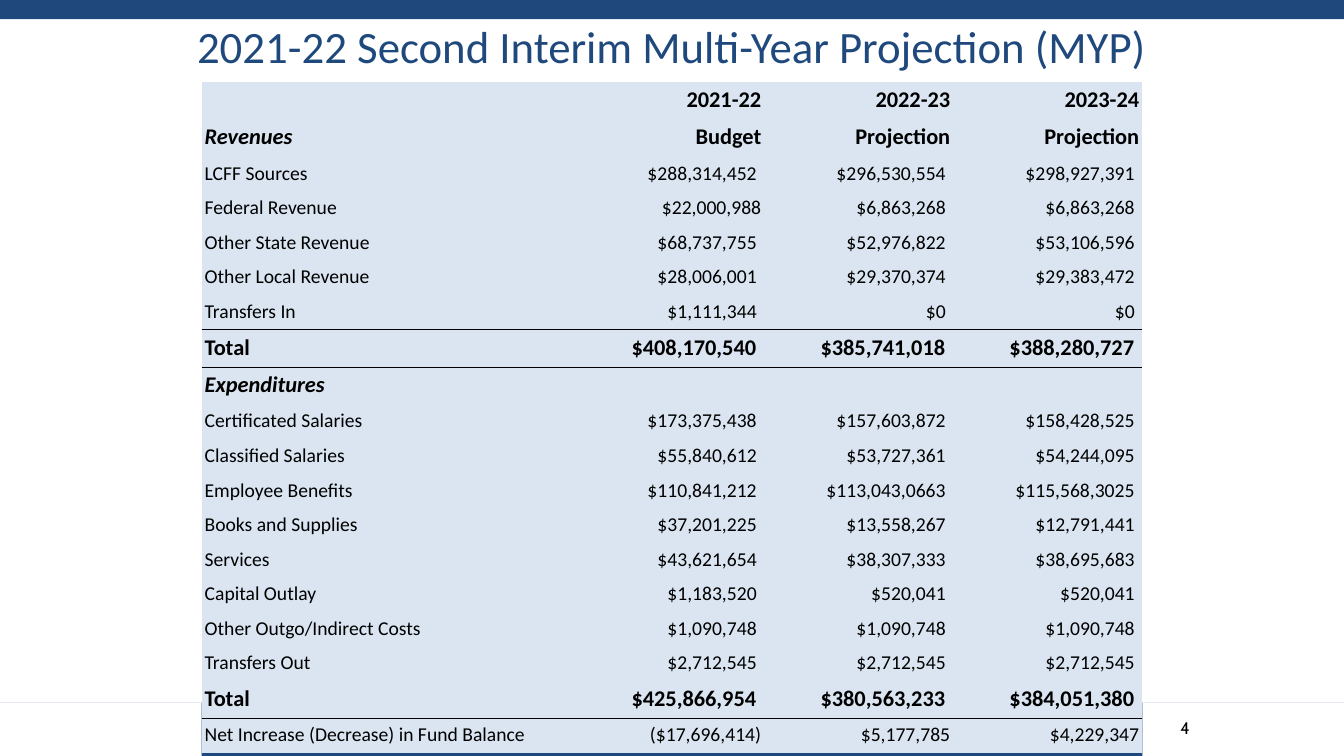
from lxml import etree
from pptx import Presentation
from pptx.dml.color import RGBColor
from pptx.enum.shapes import MSO_SHAPE
from pptx.enum.text import MSO_ANCHOR, PP_ALIGN
from pptx.oxml.ns import qn
from pptx.util import Pt

RECT = MSO_SHAPE.RECTANGLE
BOTTOM, MIDDLE = MSO_ANCHOR.BOTTOM, MSO_ANCHOR.MIDDLE
LEFT, CENTER, RIGHT = PP_ALIGN.LEFT, PP_ALIGN.CENTER, PP_ALIGN.RIGHT
NAVY = RGBColor(0x1F, 0x49, 0x7D)
PALE = RGBColor(0xDA, 0xE5, 0xF1)
WHITE = RGBColor(0xFF, 0xFF, 0xFF)
BLACK = RGBColor(0, 0, 0)
NO_STYLE = "{2D5ABB26-0587-4C30-8999-92F81FD0307C}"

TITLE = "2021-22 Second Interim Multi-Year Projection (MYP)"
PAGE = "4"
HEAD, SECTION, ITEM, TOTAL = "head", "section", "item", "total"
ROWS = [
    (HEAD, "", "2021-22", "2022-23", "2023-24"),
    (SECTION, "Revenues", "Budget", "Projection", "Projection"),
    (ITEM, "LCFF Sources", "$288,314,452 ", "$296,530,554 ", "$298,927,391 "),
    (ITEM, "Federal Revenue", "$22,000,988", "$6,863,268 ", "$6,863,268 "),
    (ITEM, "Other State Revenue", "$68,737,755 ", "$52,976,822 ", "$53,106,596 "),
    (ITEM, "Other Local Revenue", "$28,006,001 ", "$29,370,374 ", "$29,383,472 "),
    (ITEM, "Transfers In", "$1,111,344 ", "$0 ", "$0 "),
    (TOTAL, "Total", "$408,170,540 ", "$385,741,018 ", "$388,280,727 "),
    (SECTION, "Expenditures", "", "", ""),
    (ITEM, "Certificated Salaries", "$173,375,438 ", "$157,603,872 ", "$158,428,525 "),
    (ITEM, "Classified Salaries", "$55,840,612 ", "$53,727,361 ", "$54,244,095 "),
    (ITEM, "Employee Benefits", "$110,841,212 ", "$113,043,0663 ", "$115,568,3025 "),
    (ITEM, "Books and Supplies", "$37,201,225 ", "$13,558,267 ", "$12,791,441 "),
    (ITEM, "Services", "$43,621,654 ", "$38,307,333 ", "$38,695,683 "),
    (ITEM, "Capital Outlay", "$1,183,520 ", "$520,041 ", "$520,041 "),
    (ITEM, "Other Outgo/Indirect Costs", "$1,090,748 ", "$1,090,748 ", "$1,090,748 "),
    (ITEM, "Transfers Out", "$2,712,545 ", "$2,712,545 ", "$2,712,545 "),
    (TOTAL, "Total", "$425,866,954 ", "$380,563,233 ", "$384,051,380 "),
    (ITEM, "Net Increase (Decrease) in Fund Balance",
     "($17,696,414)", "$5,177,785", "$4,229,347"),
]
RULES_BELOW = (6, 17)
COLS = (267, 135, 135, 135)
ITEM_H, BOLD_H = 24.7, 26.2
W, H = 960, 540
BAND_Y, BAND_H = 502, 38
SIDE_W = 144


def add_band(slide, x, y, w, h, color):
    sp = slide.shapes.add_shape(RECT, Pt(x), Pt(y), Pt(w), Pt(h))
    sp.shadow.inherit = False
    sp.fill.solid()
    sp.fill.fore_color.rgb = color
    sp.line.fill.background()


def set_text(tf, text, size, color=BLACK, font="Calibri", align=LEFT,
             bold=False, italic=False):
    p = tf.paragraphs[0]
    p.text = text
    p.alignment = align
    for f in [r.font for r in p.runs] or [p.font]:
        f.size, f.name, f.bold, f.italic = Pt(size), font, bold, italic
        f.color.rgb = color
    return p


def add_rule(cell, side):
    ln = etree.Element(qn("a:" + side), w=str(Pt(1)))
    fill = etree.SubElement(ln, qn("a:solidFill"))
    etree.SubElement(fill, qn("a:srgbClr"), val=str(BLACK))
    cell._tc.get_or_add_tcPr().insert(0, ln)


def add_projection(slide):
    heights = [ITEM_H if row[0] == ITEM else BOLD_H for row in ROWS]
    table = slide.shapes.add_table(
        len(ROWS), len(COLS), Pt(SIDE_W), Pt(58.5), Pt(sum(COLS)), Pt(sum(heights))).table
    table.first_row = table.horz_banding = False
    table._tbl.tblPr.find(qn("a:tableStyleId")).text = NO_STYLE
    for column, width in zip(table.columns, COLS):
        column.width = Pt(width)
    for i, (kind, *texts) in enumerate(ROWS):
        table.rows[i].height = Pt(heights[i])
        for j, text in enumerate(texts):
            cell = table.cell(i, j)
            cell.margin_left = cell.margin_right = Pt(2.2)
            cell.margin_top, cell.margin_bottom = Pt(2.9), Pt(4.3)
            cell.vertical_anchor = BOTTOM
            cell.fill.solid()
            cell.fill.fore_color.rgb = PALE
            set_text(cell.text_frame, text, 14 if kind == ITEM else 16,
                     align=RIGHT if j else LEFT, bold=kind != ITEM,
                     italic=kind == SECTION and j == 0)
            if i in RULES_BELOW:
                add_rule(cell, "lnB")
            if i - 1 in RULES_BELOW:
                add_rule(cell, "lnT")


def main():
    prs = Presentation()
    prs.slide_width, prs.slide_height = Pt(W), Pt(H)
    slide = prs.slides.add_slide(prs.slide_layouts[5])

    add_band(slide, 0, 0, W, 13.7, NAVY)
    add_band(slide, 0, BAND_Y, W, BAND_H, NAVY)
    add_projection(slide)

    title = slide.shapes.title
    title.left, title.top, title.width, title.height = Pt(50.4), Pt(19.4), Pt(859), Pt(34.6)
    title.text_frame.vertical_anchor = BOTTOM
    p = set_text(title.text_frame, TITLE, 32, NAVY, align=CENTER)
    p.line_spacing = 0.7

    for x in (0, W - SIDE_W):
        add_band(slide, x, BAND_Y, SIDE_W, BAND_H, WHITE)

    number = slide.shapes.add_textbox(Pt(839.5), Pt(505.5), Pt(74), Pt(29))
    tf = number.text_frame
    tf.word_wrap = True
    tf.vertical_anchor = MIDDLE
    tf.margin_left = Pt(3.6)
    set_text(tf, PAGE, 12, font="Cabin")

    prs.save("out.pptx")


if __name__ == "__main__":
    main()
